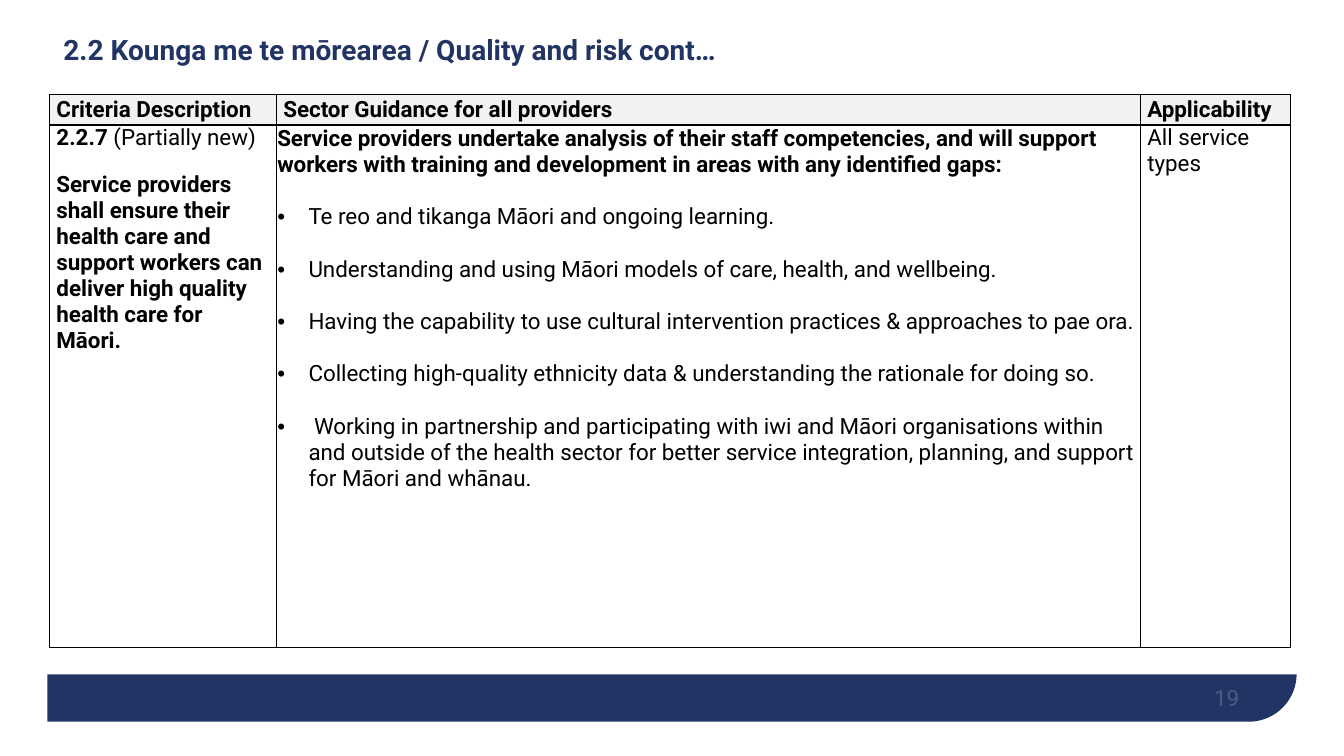
from lxml.etree import SubElement
from pptx import Presentation
from pptx.dml.color import RGBColor
from pptx.enum.shapes import MSO_SHAPE
from pptx.enum.text import MSO_ANCHOR, PP_ALIGN
from pptx.oxml import parse_xml
from pptx.oxml.ns import nsdecls, qn
from pptx.util import Inches, Pt

NAVY, WHITE, BLACK, GREY = "213463", "FFFFFF", "000000", "F2F2F2"
HEADS = ["Criteria Description", "Sector Guidance for all providers", "Applicability"]
WIDTHS = [2.25, 8.57, 1.49]
HEIGHTS = [0.3, 5.18]
INTRO = ("Service providers undertake analysis of their staff competencies, and will support "
         "workers with training and development in areas with any identified gaps:")
POINTS = [
    "Te reo and tikanga Māori and ongoing learning.",
    "Understanding and using Māori models of care, health, and wellbeing.",
    "Having the capability to use cultural intervention practices & approaches to pae ora.",
    "Collecting high-quality ethnicity data & understanding the rationale for doing so.",
    " Working in partnership and participating with iwi and Māori organisations within and "
    "outside of the health sector for better service integration, planning, and support "
    "for Māori and whānau.",
]
DUTY = ("Service providers shall ensure their health care and support workers can deliver "
        "high quality health care for Māori.")


def color(code):
    return RGBColor.from_string(code)


def write(para, text, size=16, bold=False, code=BLACK):
    run = para.add_run()
    run.text = text
    font = run.font
    font.name, font.size, font.bold = "Roboto", Pt(size), bold
    font.color.rgb = color(code)
    return run


def block(slide, kind, box, code):
    shape = slide.shapes.add_shape(kind, *map(Inches, box))
    shape.shadow.inherit = False
    shape.fill.solid()
    shape.fill.fore_color.rgb = color(code)
    shape.line.fill.background()
    return shape


def label(slide, box, anchor, inset=(0.1, 0.05)):
    frame = slide.shapes.add_textbox(*map(Inches, box)).text_frame
    frame.word_wrap = True
    frame.vertical_anchor = anchor
    frame.margin_left = frame.margin_right = Inches(inset[0])
    frame.margin_top = frame.margin_bottom = Inches(inset[1])
    return frame.paragraphs[0]


def footer(slide, left, top, width, height):
    band = block(slide, MSO_SHAPE.ROUND_1_RECTANGLE, (left, top, width, height), NAVY)
    band.adjustments[0] = 0.07
    band.rotation = 180
    band.element.spPr.xfrm.set("flipH", "1")
    block(slide, MSO_SHAPE.RECTANGLE, (0, 0, 13.33, top + height - 0.47), WHITE)
    para = label(slide, (left + width - 3.57, top + height - 0.51, 3, 0.4),
                 MSO_ANCHOR.BOTTOM, (0, 0))
    para.alignment = PP_ALIGN.RIGHT
    run = write(para, "19", code=WHITE)
    tint = run.font.fill._xPr.find(".//" + qn("a:srgbClr"))
    SubElement(tint, qn("a:alpha")).set("val", "20000")


def title(slide, *box):
    para = label(slide, box, MSO_ANCHOR.MIDDLE)
    para.line_spacing = 0.9
    write(para, "2.2 Kounga me te mōrearea / Quality and risk cont…", 20, True, NAVY)


def border(cell):
    props = cell._tc.get_or_add_tcPr()
    for spot, side in enumerate("LRTB"):
        props.insert(spot, parse_xml(
            f'<a:ln{side} {nsdecls("a")} w="12700"><a:solidFill>'
            f'<a:srgbClr val="{BLACK}"/></a:solidFill></a:ln{side}>'))


def bullet(para):
    props = para._p.get_or_add_pPr()
    props.set("marL", str(Inches(0.31)))
    props.set("indent", str(-Inches(0.31)))
    SubElement(props, qn("a:buFont")).set("typeface", "Arial")
    SubElement(props, qn("a:buChar")).set("char", "•")


def grid(slide, left, top):
    box = (left, top, sum(WIDTHS), sum(HEIGHTS))
    table = slide.shapes.add_table(2, 3, *map(Inches, box)).table
    table.first_row = table.horz_banding = False
    for col, width in zip(table.columns, WIDTHS):
        col.width = Inches(width)
    for row, height in zip(table.rows, HEIGHTS):
        row.height = Inches(height)
    for cell in table.iter_cells():
        cell.margin_left = cell.margin_right = Inches(0.07)
        cell.margin_top = cell.margin_bottom = 0
        cell.fill.background()
        border(cell)
    for col, head in enumerate(HEADS):
        cell = table.cell(0, col)
        cell.fill.solid()
        cell.fill.fore_color.rgb = color(GREY)
        cell.vertical_anchor = MSO_ANCHOR.MIDDLE
        write(cell.text_frame.paragraphs[0], head, bold=True)

    need, guide, scope = [table.cell(1, col) for col in range(3)]
    para = need.text_frame.paragraphs[0]
    para.space_after = Pt(9)
    write(para, "2.2.7 ", bold=True)
    write(para, "(Partially new)")
    para = need.text_frame.add_paragraph()
    para.space_before = Pt(6)
    write(para, DUTY, bold=True)

    guide.margin_left = guide.margin_right = guide.margin_top = Inches(0.01)
    write(guide.text_frame.paragraphs[0], INTRO, bold=True)
    for point in POINTS:
        para = guide.text_frame.add_paragraph()
        para.space_before = Pt(18.75)
        bullet(para)
        write(para, point)

    write(scope.text_frame.paragraphs[0], "All service types")


def main():
    deck = Presentation()
    deck.slide_width, deck.slide_height = Inches(13.33), Inches(7.5)
    slide = deck.slides.add_slide(deck.slide_layouts[6])
    footer(slide, 0.47, 0.37, 12.39, 6.79)
    title(slide, 0.53, -0.07, 12.02, 1.17)
    grid(slide, 0.49, 0.94)
    deck.save("out.pptx")


if __name__ == "__main__":
    main()
